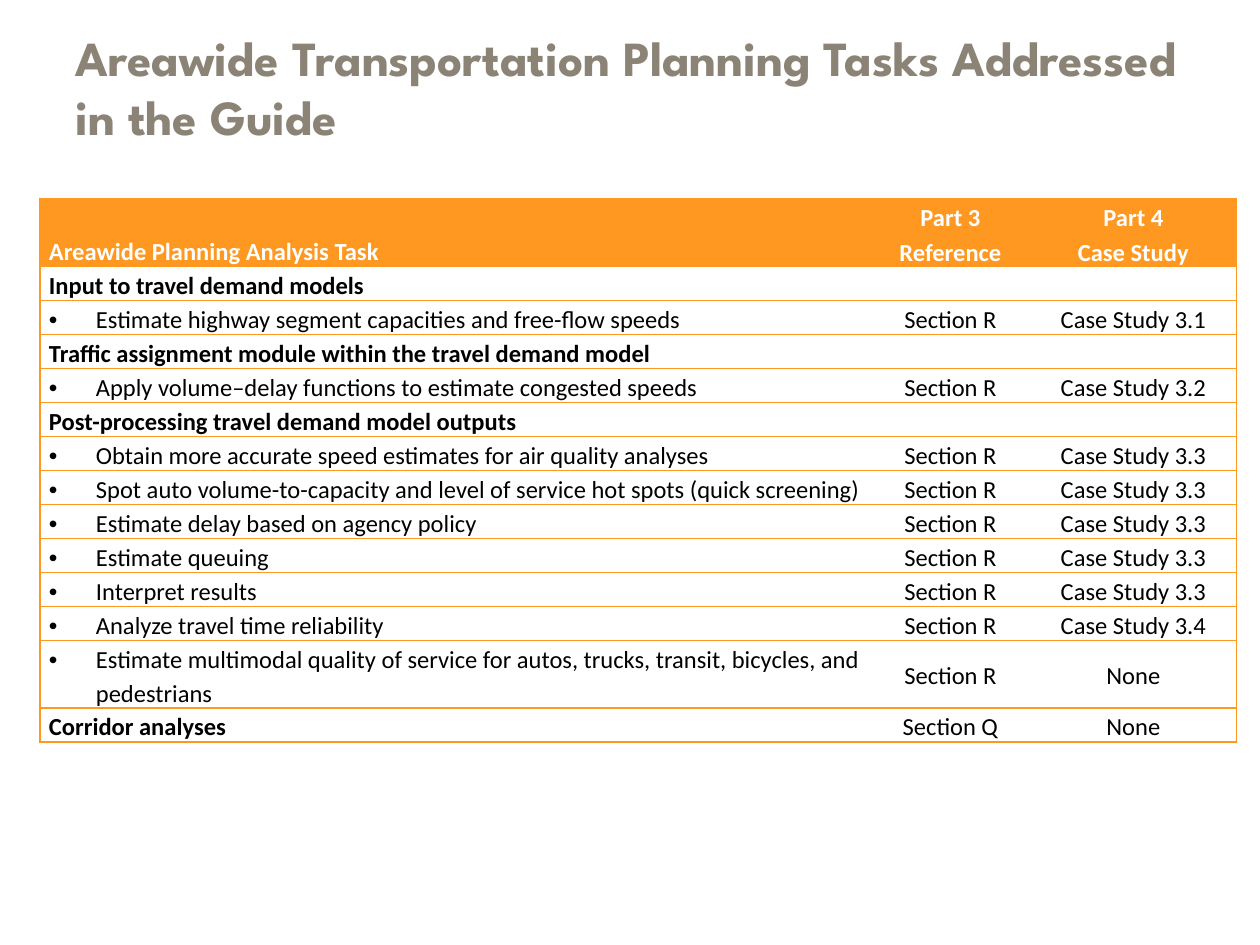
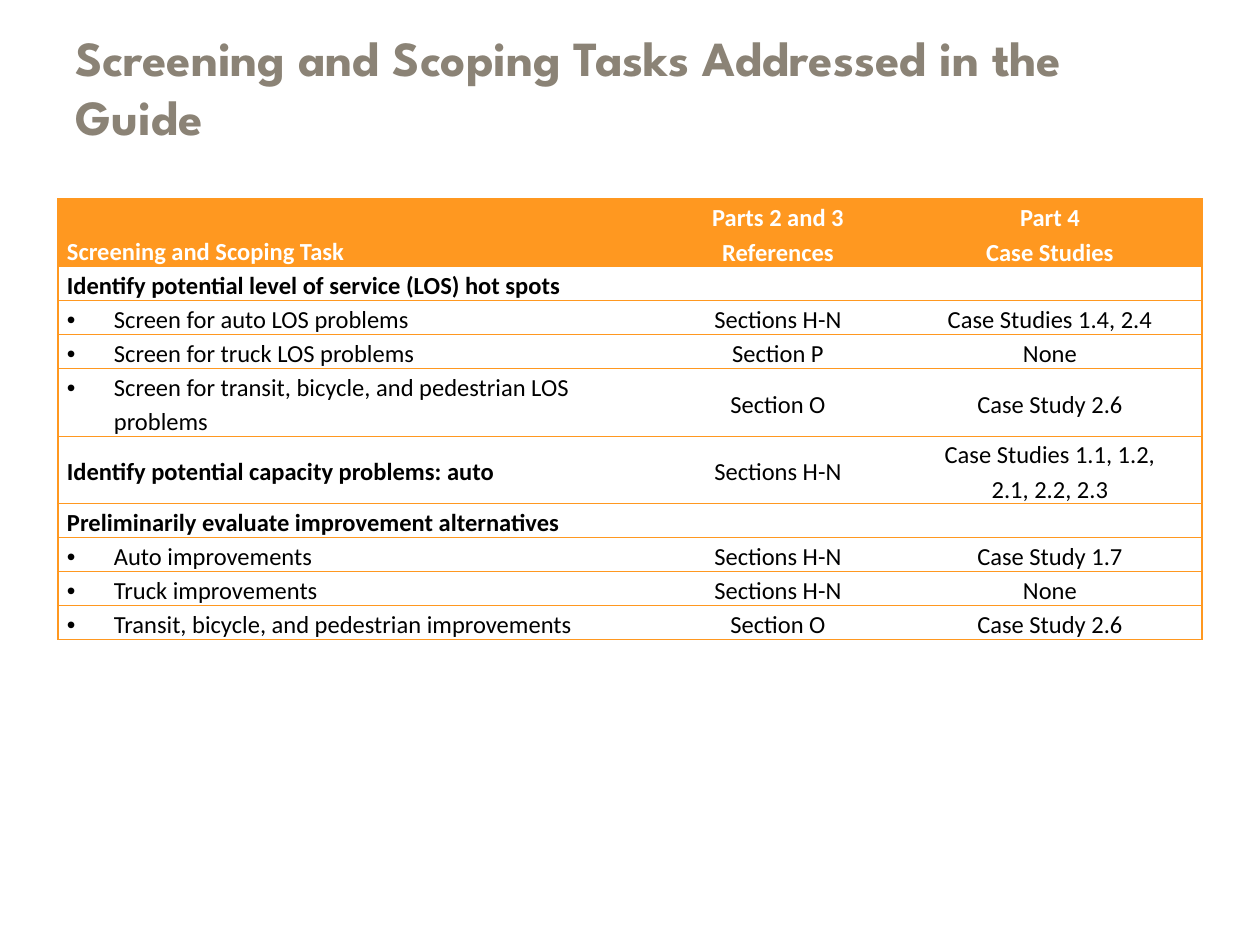
from dataclasses import dataclass
from lxml import etree
from pptx import Presentation
from pptx import util as u
from pptx.dml.color import RGBColor
from pptx.enum import text
from pptx.oxml.ns import qn

SLIDES = [
    {
        "title": "Areawide Transportation Planning Tasks Addressed in the Guide",
        "left": 40,
        "columns": [831, 159, 207],
        "header": ["Areawide Planning Analysis Task", "Part 3\nReference", "Part 4\nCase Study"],
        "sections": [
            ("Input to travel demand models", "", "", [
                ("Estimate highway segment capacities and free-flow speeds", "Section R", "Case Study 3.1"),
            ]),
            ("Traffic assignment module within the travel demand model", "", "", [
                ("Apply volume–delay functions to estimate congested speeds", "Section R", "Case Study 3.2"),
            ]),
            ("Post-processing travel demand model outputs", "", "", [
                ("Obtain more accurate speed estimates for air quality analyses", "Section R", "Case Study 3.3"),
                ("Spot auto volume-to-capacity and level of service hot spots (quick screening)",
                 "Section R", "Case Study 3.3"),
                ("Estimate delay based on agency policy", "Section R", "Case Study 3.3"),
                ("Estimate queuing", "Section R", "Case Study 3.3"),
                ("Interpret results", "Section R", "Case Study 3.3"),
                ("Analyze travel time reliability", "Section R", "Case Study 3.4"),
                ("Estimate multimodal quality of service for autos, trucks, transit, bicycles, and pedestrians",
                 "Section R", "None"),
            ]),
            ("Corridor analyses", "Section Q", "None", []),
        ],
    },
    {
        "title": "Screening and Scoping Tasks Addressed in the Guide",
        "left": 58,
        "columns": [600, 240, 304],
        "header": ["Screening and Scoping Task", "Parts 2 and 3 References", "Part 4\nCase Studies"],
        "sections": [
            ("Identify potential level of service (LOS) hot spots", "", "", [
                ("Screen for auto LOS problems", "Sections H-N", "Case Studies 1.4, 2.4"),
                ("Screen for truck LOS problems", "Section P", "None"),
                ("Screen for transit, bicycle, and pedestrian LOS problems", "Section O", "Case Study 2.6"),
            ]),
            ("Identify potential capacity problems: auto", "Sections H-N",
             "Case Studies 1.1, 1.2,\n2.1, 2.2, 2.3", []),
            ("Preliminarily evaluate improvement alternatives", "", "", [
                ("Auto improvements", "Sections H-N", "Case Study 1.7"),
                ("Truck improvements", "Sections H-N", "None"),
                ("Transit, bicycle, and pedestrian improvements", "Section O", "Case Study 2.6"),
            ]),
        ],
    },
]


@dataclass(frozen=True)
class Theme:
    title_font: str = "League Spartan"
    table_font: str = "Calibri"
    title_color: str = "8B8376"
    accent: str = "FF9820"
    header_text: str = "FFFFFF"
    body_text: str = "000000"
    title_size: int = 28
    table_size: int = 14
    line_spacing: float = 1.15
    border: float = 0.75


THEME = Theme()
TITLE_BOX = (63, 21, 1134, 131)
TABLE_TOP = 199
ROW_HEIGHT = 34
CELL_MARGIN = 9
BULLET_INDENT = 47


def px(length):
    return u.Emu(round(length * 914400 / 126))


def style_font(font, name, size, color, bold):
    font.name = name
    font.size = u.Pt(size)
    font.bold = bold
    font.color.rgb = RGBColor.from_string(color)


def add_title(slide, words):
    box = slide.shapes.title
    box.left, box.top, box.width, box.height = map(px, TITLE_BOX)
    frame = box.text_frame
    frame.text = words
    frame.word_wrap = True
    frame.auto_size = text.MSO_AUTO_SIZE.SHAPE_TO_FIT_TEXT
    para = frame.paragraphs[0]
    para.alignment = text.PP_ALIGN.LEFT
    style_font(para.runs[0].font, THEME.title_font, THEME.title_size, THEME.title_color, True)


def add_borders(cell, visible):
    props = cell._tc.get_or_add_tcPr()
    for side in "LRTB":
        line = etree.SubElement(props, qn(f"a:ln{side}"), w=str(u.Pt(THEME.border)))
        if side in visible:
            fill = etree.SubElement(line, qn("a:solidFill"))
            etree.SubElement(fill, qn("a:srgbClr"), val=THEME.accent)
        else:
            etree.SubElement(line, qn("a:noFill"))


def add_bullet(para):
    props = para._p.get_or_add_pPr()
    props.set("marL", str(px(BULLET_INDENT)))
    props.set("indent", str(-px(BULLET_INDENT)))
    etree.SubElement(props, qn("a:buFont"), typeface="Arial")
    etree.SubElement(props, qn("a:buChar"), char="•")


def fill_cell(cell, words, column, last_column, kind):
    is_header = kind == "header"
    sides = "TB" + ("L" if column == 0 else "") + ("R" if column == last_column else "")
    add_borders(cell, sides)
    if is_header:
        cell.fill.solid()
        cell.fill.fore_color.rgb = RGBColor.from_string(THEME.accent)
    else:
        cell.fill.background()
    cell.margin_left = cell.margin_right = px(CELL_MARGIN)
    cell.margin_top = cell.margin_bottom = 0
    cell.vertical_anchor = text.MSO_ANCHOR.BOTTOM if is_header else text.MSO_ANCHOR.MIDDLE

    para = cell.text_frame.paragraphs[0]
    para.text = words
    if kind == "task" and column == 0:
        add_bullet(para)
    para.line_spacing = THEME.line_spacing
    para.alignment = text.PP_ALIGN.CENTER if column else text.PP_ALIGN.LEFT
    color = THEME.header_text if is_header else THEME.body_text
    bold = is_header or (kind == "section" and column == 0)
    for span in para.runs:
        style_font(span.font, THEME.table_font, THEME.table_size, color, bold)
    size = str(THEME.table_size * 100)
    for line_break in para._p.findall(qn("a:br")):
        etree.SubElement(line_break, qn("a:rPr"), sz=size)
    if not words:
        etree.SubElement(para._p, qn("a:endParaRPr"), sz=size)


def table_rows(content):
    yield "header", content["header"]
    for *section, tasks in content["sections"]:
        yield "section", section
        for task in tasks:
            yield "task", task


def add_task_table(slide, content):
    rows = list(table_rows(content))
    widths = content["columns"]
    frame = slide.shapes.add_table(
        len(rows), len(widths), px(content["left"]), px(TABLE_TOP),
        px(sum(widths)), px(ROW_HEIGHT * len(rows)))
    table = frame.table
    table.horz_banding = False
    for column, width in zip(table.columns, widths):
        column.width = px(width)
    for row, (kind, entries) in enumerate(rows):
        for column, words in enumerate(entries):
            fill_cell(table.cell(row, column), words, column, len(widths) - 1, kind)


def main():
    deck = Presentation()
    deck.slide_width, deck.slide_height = px(1260), px(945)
    title_only = deck.slide_layouts.get_by_name("Title Only")
    for content in SLIDES:
        page = deck.slides.add_slide(title_only)
        add_title(page, content["title"])
        add_task_table(page, content)
    deck.save("out.pptx")


if __name__ == "__main__":
    main()
